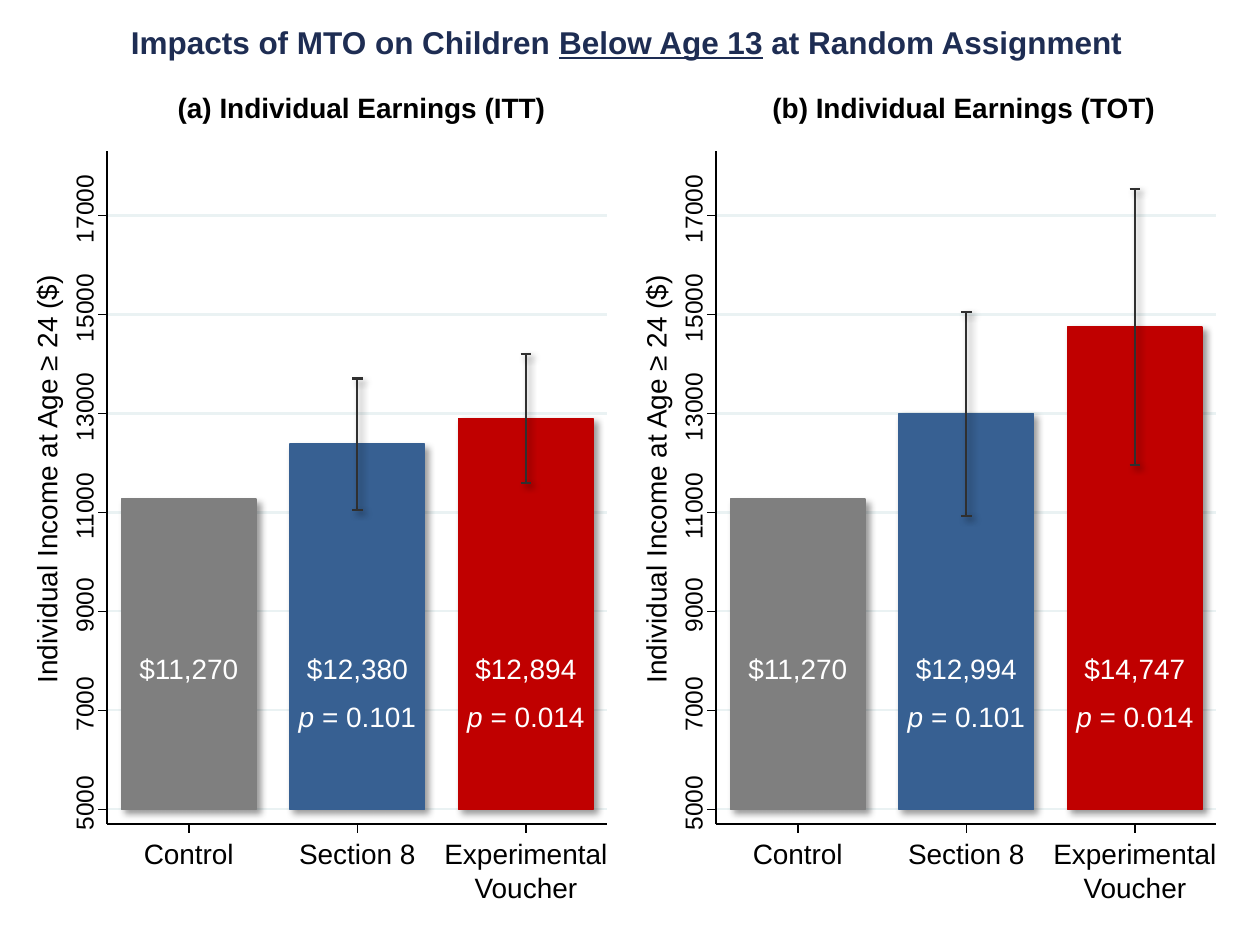
from lxml import etree
from pptx import Presentation
from pptx import util as u
from pptx.dml.color import RGBColor
from pptx.enum import shapes, text
from pptx.oxml import ns

Pt = u.Pt
COLORS = {
    "title": "1E2D53", "text": "000000", "axis": "000000", "grid": "EAF2F3",
    "error": "303030", "value": "FFFFFF",
    "Control": "7F7F7F", "Section 8": "376092", "Experimental": "C00000",
}
AXIS_X, AXIS_WIDTH, AXIS_TOP, AXIS_BOTTOM = 61.2, 285.8, 86.4, 471
BASE_VALUE, BASE_Y, POINTS_PER_DOLLAR = 5000, 462.5, 0.02828
BAR_WIDTH, BAR_STEP, FIRST_BAR_CENTER = 77, 96.3, 46.7
PANEL_STEP, TICK, CAP = 348, 5, 3

# Per panel: heading, its center, and (category, mean, error margin, p value)
PANELS = [
    ("(a) Individual Earnings (ITT)", 206.6, 228, [
        ("Control", 11270, 0, ""),
        ("Section 8", 12380, 1325, "0.101"),
        ("Experimental", 12894, 1300, "0.014")]),
    ("(b) Individual Earnings (TOT)", 550.8, 236, [
        ("Control", 11270, 0, ""),
        ("Section 8", 12994, 2060, "0.101"),
        ("Experimental", 14747, 2790, "0.014")]),
]
CATEGORY_WIDTHS = {"Control": 52, "Section 8": 67, "Experimental": 98.5}

presentation = Presentation()
presentation.slide_width, presentation.slide_height = Pt(720), Pt(540)
slide = presentation.slides.add_slide(presentation.slide_layouts[5])
shadowed = []


def add_line(x1, y1, x2, y2, color, width):
    line = slide.shapes.add_connector(
        shapes.MSO_CONNECTOR.STRAIGHT, Pt(x1), Pt(y1), Pt(x2), Pt(y2))
    line.line.color.rgb = RGBColor.from_string(COLORS[color])
    line.line.width = Pt(width)
    etree.SubElement(line._element.spPr, ns.qn("a:effectLst"))
    return line


def add_text(center_x, top, width, height, lines, color="text", size=16,
             inset=False, rotation=0, shape=None):
    """Write centered lines, each a list of (words, font formats) runs."""
    shape = shape or slide.shapes.add_textbox(0, 0, 0, 0)
    place = {"left": Pt(center_x - width / 2), "top": Pt(top),
             "width": Pt(width), "height": Pt(height), "rotation": rotation}
    for name, value in place.items():
        setattr(shape, name, value)
    frame = shape.text_frame
    margin_x, margin_y = (Pt(7.2), Pt(3.6)) if inset else (0, 0)
    layout = {"margin_left": margin_x, "margin_right": margin_x,
              "margin_top": margin_y, "margin_bottom": margin_y,
              "word_wrap": inset, "auto_size": text.MSO_AUTO_SIZE.NONE,
              "vertical_anchor": text.MSO_ANCHOR.TOP}
    for name, value in layout.items():
        setattr(frame, name, value)
    for index, runs in enumerate(lines):
        paragraph = frame.add_paragraph() if index else frame.paragraphs[0]
        paragraph.alignment = text.PP_ALIGN.CENTER
        for words, formats in runs:
            run = paragraph.add_run()
            run.text = words
            run.font.color.rgb = RGBColor.from_string(COLORS[color])
            for name, value in {"name": "Arial", "size": Pt(size), **formats}.items():
                setattr(run.font, name, value)


# Title
bold = {"bold": True}
add_text(358, 9.4, 720, 29, [[
    ("Impacts of MTO on Children ", bold),
    ("Below Age 13", {"bold": True, "underline": True}),
    (" at Random Assignment", bold)]],
    "title", 18, inset=True, shape=slide.shapes.title)

for panel_index, (heading, heading_center, heading_width, bars) in enumerate(PANELS):
    axis_x = AXIS_X + panel_index * PANEL_STEP
    axis_end = axis_x + AXIS_WIDTH
    ticks = [(value, BASE_Y - (value - BASE_VALUE) * POINTS_PER_DOLLAR)
             for value in range(BASE_VALUE, 17001, 2000)]

    # Grid lines
    for value, y in ticks:
        add_line(axis_x, y, axis_end, y, "grid", 1.25)

    # Bars with error bars, values and category labels
    for bar_index, (category, mean, margin, p_value) in enumerate(bars):
        center = axis_x + FIRST_BAR_CENTER + bar_index * BAR_STEP
        height = (mean - BASE_VALUE) * POINTS_PER_DOLLAR
        top = BASE_Y - height
        bar = slide.shapes.add_shape(
            shapes.MSO_SHAPE.RECTANGLE, Pt(center - BAR_WIDTH / 2), Pt(top),
            Pt(BAR_WIDTH), Pt(height))
        color = RGBColor.from_string(COLORS[category])
        bar.fill.solid()
        bar.fill.fore_color.rgb = color
        bar.line.color.rgb = color
        bar.line.width = 0
        bar.shadow.inherit = False
        shadowed.append(bar)

        if margin:
            reach = margin * POINTS_PER_DOLLAR
            shadowed.append(add_line(center, top - reach, center, top + reach,
                                     "error", 1.25))
            for y in (top - reach, top + reach):
                shadowed.append(add_line(center - CAP, y, center + CAP, y,
                                         "error", 1.25))
            add_text(center, 396, 87, 26.6,
                     [[("p ", {"italic": True}), (f"= {p_value}", {})]],
                     "value", inset=True)
        add_text(center, 369, BAR_WIDTH, 26.6, [[(f"${mean:,}", {})]],
                 "value", inset=True)

        add_line(center, AXIS_BOTTOM, center, AXIS_BOTTOM + TICK, "axis", 0.88)
        lines = [[(category, {})]]
        if category == "Experimental":
            lines.append([("Voucher", {})])
        add_text(center, 478, CATEGORY_WIDTHS[category], 19.4 * len(lines), lines)

    # Axes and value labels
    add_line(axis_x, AXIS_BOTTOM, axis_x, AXIS_TOP, "axis", 0.88)
    add_line(axis_x, AXIS_BOTTOM, axis_end, AXIS_BOTTOM, "axis", 0.88)
    for value, y in ticks:
        add_line(axis_x, y, axis_x - TICK, y, "axis", 0.88)
        add_text(axis_x - 13.2, y - 12.2, 7.8 * len(str(value)), 17,
                 [[(str(value), {})]], size=14, rotation=270)
    add_text(axis_x - 34.6, 264.2, 236, 19.4,
             [[("Individual Income at Age ≥ 24 ($)", {})]], rotation=270)

    # Panel heading
    add_text(heading_center, 48.4, heading_width, 26.6, [[(heading, bold)]], inset=True)

# Soft shadows on bars and error bars
for shape in shadowed:
    effects = shape._element.spPr.find(ns.qn("a:effectLst"))
    shadow = etree.SubElement(effects, ns.qn("a:outerShdw"), {
        "blurRad": str(Pt(4)), "dist": str(Pt(3)), "dir": str(45 * 60000),
        "algn": "tl", "rotWithShape": "0"})
    shadow_color = etree.SubElement(shadow, ns.qn("a:srgbClr"), val="000000")
    etree.SubElement(shadow_color, ns.qn("a:alpha"), val="40000")

presentation.save("out.pptx")
